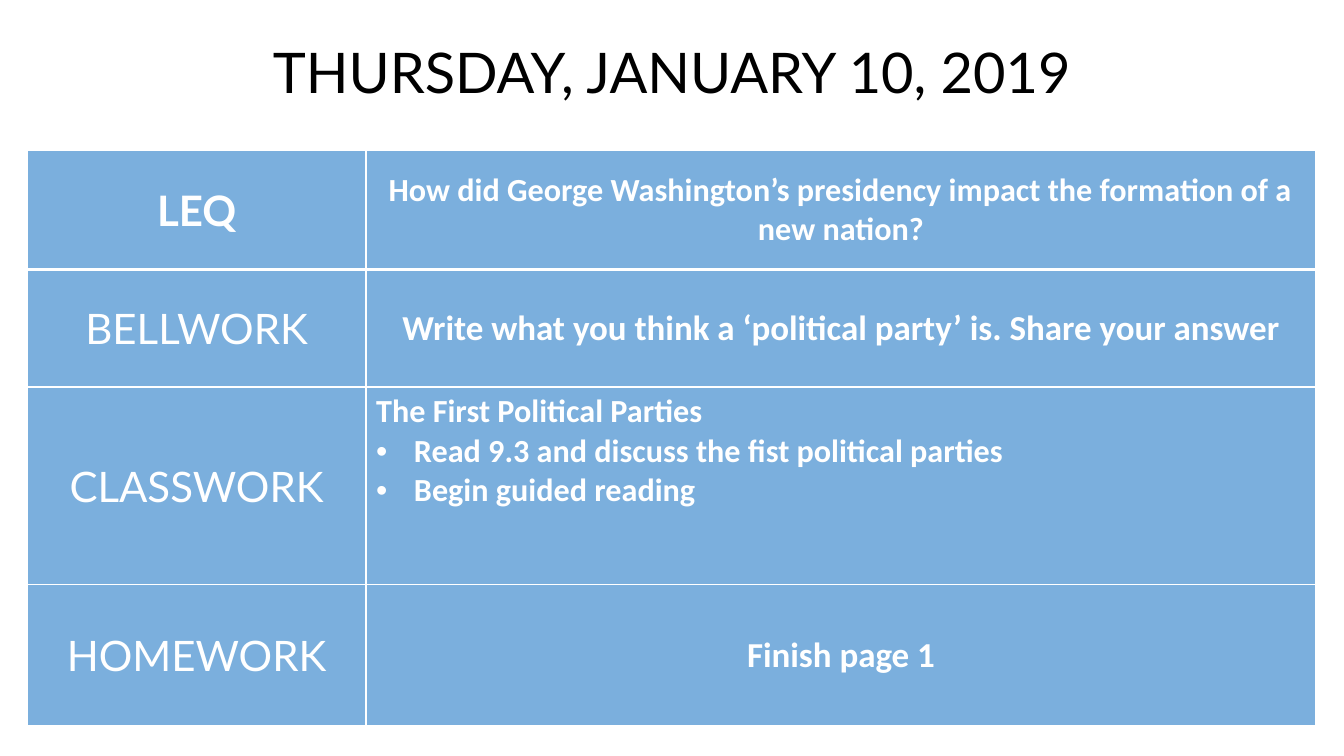
from lxml import etree
from pptx import Presentation
from pptx.dml.color import RGBColor
from pptx.enum.shapes import MSO_SHAPE
from pptx.enum.text import MSO_ANCHOR, PP_ALIGN
from pptx.oxml import parse_xml
from pptx.oxml.ns import qn
from pptx.util import Pt

RECTANGLE = MSO_SHAPE.RECTANGLE
MIDDLE, TOP = MSO_ANCHOR.MIDDLE, MSO_ANCHOR.TOP
CENTER, LEFT = PP_ALIGN.CENTER, PP_ALIGN.LEFT
DRAWING = "http://schemas.openxmlformats.org/drawingml/2006/main"
WHITE, BLACK, BLUE = "FFFFFF", "000000", "5B9BD5"


def paint(fill, color, opacity):
    fill.solid()
    fill.fore_color.rgb = RGBColor.from_string(color)
    color_element = fill._xPr.find(qn("a:solidFill"))[0]
    etree.SubElement(color_element, qn("a:alpha"), val=str(opacity * 1000))


def write(paragraph, text, color, alignment, **font_format):
    paragraph.alignment = alignment
    run = paragraph.add_run()
    run.text = text
    run.font.color.rgb = RGBColor.from_string(color)
    for name, value in font_format.items():
        setattr(run.font, name, value)


presentation = Presentation()
presentation.slide_width, presentation.slide_height = Pt(960), Pt(540)
slide = presentation.slides.add_slide(presentation.slide_layouts[6])

# Agenda table: label, bold, then text size, alignment, anchor and lines
agenda = [
    ("LEQ", True, 85, 23, CENTER, MIDDLE,
     ["How did George Washington’s presidency impact the formation of a new nation?"]),
    ("BELLWORK", False, 84, 25, CENTER, MIDDLE,
     ["Write what you think a ‘political party’ is. Share your answer"]),
    ("CLASSWORK", False, 141, 23, LEFT, TOP,
     ["The First Political Parties",
      "Read 9.3 and discuss the fist political parties",
      "Begin guided reading"]),
    ("HOMEWORK", False, 101, 25, CENTER, MIDDLE, ["Finish page 1"]),
]
table = slide.shapes.add_table(
    len(agenda), 2, Pt(19.5), Pt(107.5), Pt(920.5), Pt(411)).table
table.columns[0].width, table.columns[1].width = Pt(242), Pt(678.5)

for row, (label, bold, height, size, alignment, anchor, lines) in enumerate(agenda):
    table.rows[row].height = Pt(height)
    label_cell, text_cell = table.cell(row, 0), table.cell(row, 1)

    label_cell.vertical_anchor = MIDDLE
    write(label_cell.text_frame.paragraphs[0], label, WHITE, CENTER,
          name="Lato", size=Pt(30), bold=bold)

    text_cell.vertical_anchor = anchor
    frame = text_cell.text_frame
    for index, line in enumerate(lines):
        paragraph = frame.add_paragraph() if index else frame.paragraphs[0]
        write(paragraph, line, WHITE, alignment,
              name="Calibri", size=Pt(size), bold=True)
        if index:  # Lines below the heading are bullets
            properties = paragraph._p.get_or_add_pPr()
            properties.set("marL", str(Pt(27)))
            properties.set("indent", str(-Pt(27)))
            etree.SubElement(properties, qn("a:buFont"), typeface="Arial")
            etree.SubElement(properties, qn("a:buChar"), char="•")

    # Fill and borders, with a thick rule under the first row
    top_width, bottom_width = (3 if row == 1 else 1), (3 if row == 0 else 1)
    borders = {"lnL": 1, "lnR": 1, "lnT": top_width, "lnB": bottom_width}
    for cell in (label_cell, text_cell):
        paint(cell.fill, BLUE, 80)
        for position, (side, width) in enumerate(borders.items()):
            cell._tc.tcPr.insert(position, parse_xml(
                f'<a:{side} xmlns:a="{DRAWING}" w="{Pt(width)}"><a:solidFill>'
                f'<a:srgbClr val="{WHITE}"/></a:solidFill></a:{side}>'))

# Date title
title = slide.shapes.add_shape(RECTANGLE, Pt(19.5), Pt(14.5), Pt(920.5), Pt(72))
title.shadow.inherit = False
title.line.fill.background()
paint(title.fill, WHITE, 65)
title.text_frame.word_wrap = True
title.text_frame.vertical_anchor = MIDDLE
write(title.text_frame.paragraphs[0], "THURSDAY, JANUARY 10, 2019", BLACK, CENTER,
      name="Lato", size=Pt(40))

presentation.save("out.pptx")
